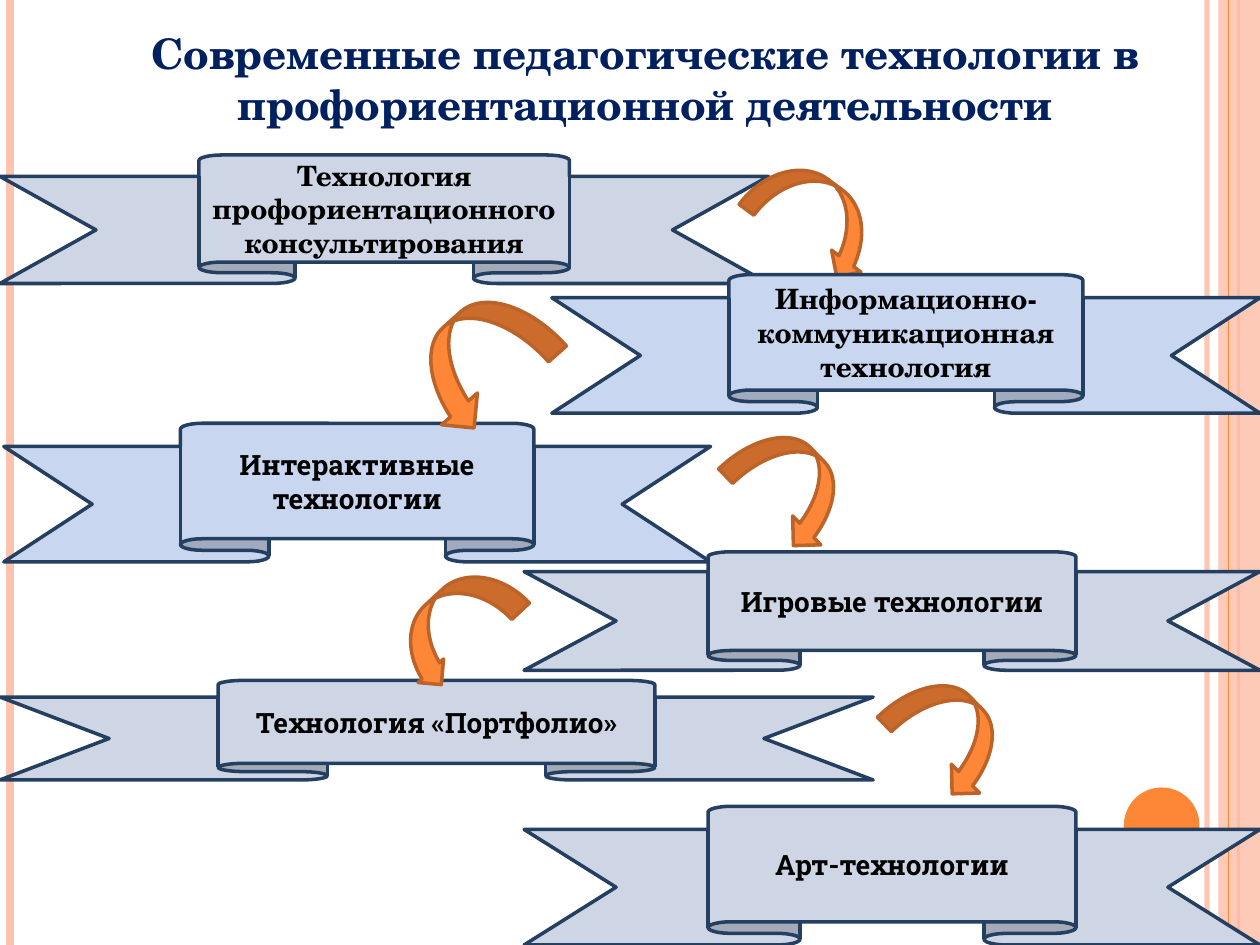
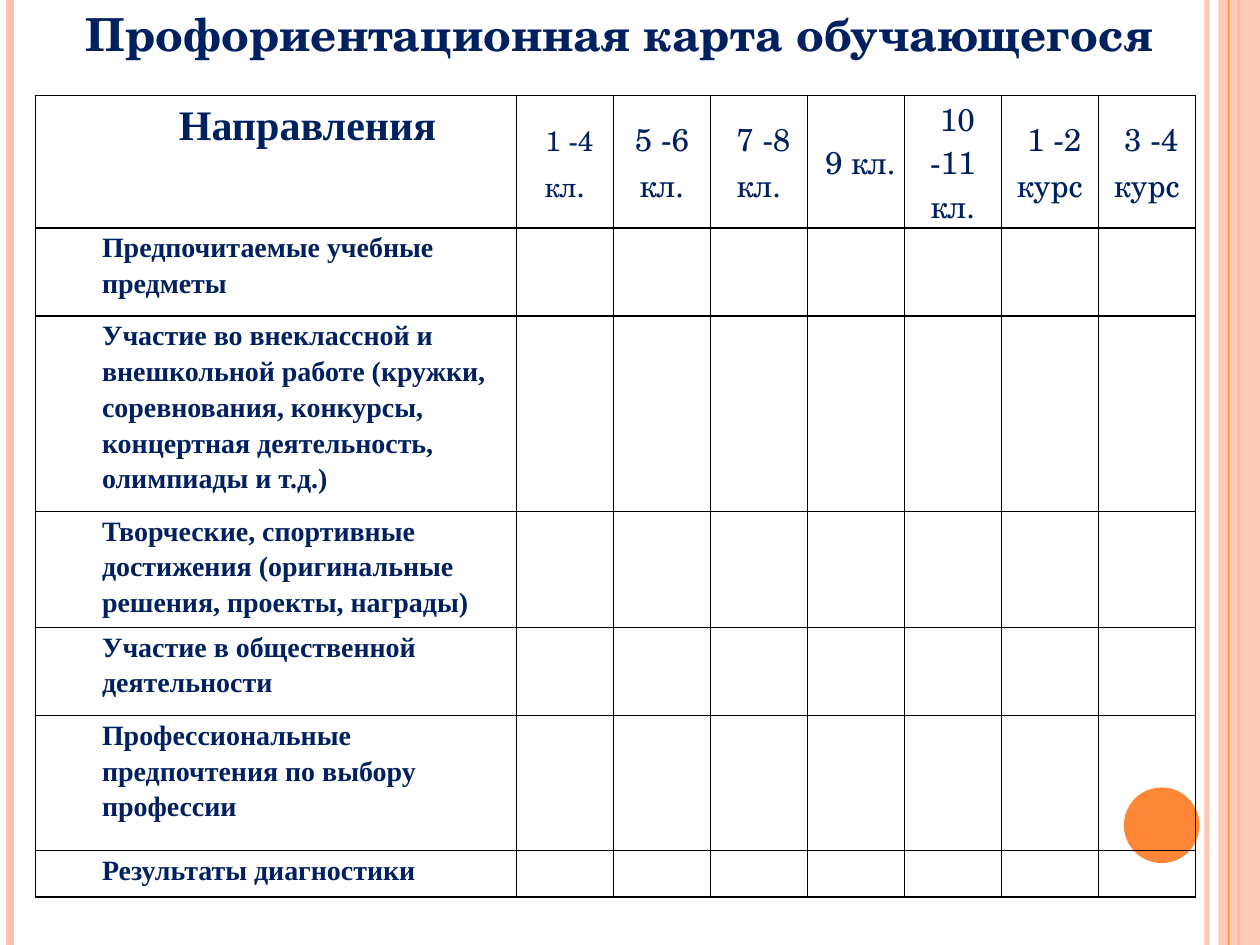
"""Build two slides on career guidance: a chain of technologies and a student's map."""
from dataclasses import dataclass
from typing import Any, Optional

import pptx
import pptx.dml.color
import pptx.enum.shapes
import pptx.enum.text
import pptx.oxml
import pptx.oxml.ns
import pptx.util
from pptx.util import Inches

COLORS = {
    "navy": "002060", "black": "000000", "orange": "FE8637", "rust": "BC6329",
    "peach": "FEC3AE", "ribbon_edge": "243F60", "gray_blue": "CED6E6", "light_blue": "C8D6F0",
}
SCHOLA, SLAB, TIMES = "TeX Gyre Schola", "Roboto Slab", "Times New Roman"
SHAPES = pptx.enum.shapes.MSO_SHAPE
ALIGN = pptx.enum.text.PP_ALIGN
ANCHOR = pptx.enum.text.MSO_ANCHOR
DOWN, UP = SHAPES.CURVED_DOWN_ARROW, SHAPES.CURVED_UP_ARROW
TITLE_ONLY_LAYOUT = 5
SLIDE_HEIGHT = 7.5


@dataclass
class Stripe:
    x: float
    color: str
    width: float
    opacity: int = 100


@dataclass
class Ribbon:
    text: str
    box: tuple[float, float, float, float]
    font: str = SLAB
    fill: str = "gray_blue"
    fold: float = 0.5


@dataclass
class CurvedArrow:
    box: tuple[float, float, float, float]
    rotation: float
    kind: Any = DOWN
    thickness: float = 0.25


@dataclass
class Grade:
    text: Any
    spacing: Optional[float] = None


BACK_STRIPES = [Stripe(9.58, "peach", 3, 93), Stripe(0.08, "peach", 4.5), Stripe(9.83, "orange", 1.5)]
FRONT_STRIPE = Stripe(9.75, "orange", 0.75)

TECHNOLOGY_CHAIN = [
    Ribbon("Технология профориентационного консультирования", (0, 1.23, 6.1, 1.02), SCHOLA, fold=0.482),
    CurvedArrow((5.93, 1.43, 1.11, 0.58), 36.6),
    Ribbon("Информационно-коммуникационная технология", (4.38, 2.18, 5.62, 1.1), SCHOLA, "light_blue"),
    Ribbon("Интерактивные технологии", (0.03, 3.36, 5.61, 1.1), fill="light_blue"),
    CurvedArrow((5.78, 3.54, 1.01, 0.64), 45.7),
    Ribbon("Игровые технологии", (4.16, 4.38, 5.84, 0.94)),
    Ribbon("Технология «Портфолио»", (0, 5.4, 6.93, 0.79)),
    CurvedArrow((3.22, 2.47, 1.17, 0.76), 138.4, UP),
    CurvedArrow((3.07, 4.68, 1.09, 0.55), 137.2, UP, 0.347),
    CurvedArrow((7.04, 5.51, 1.01, 0.64), 45.7),
    Ribbon("Арт-технологии", (4.16, 6.4, 5.84, 1.1)),
]

GRADES = [
    Grade([(" ", 18), ("1 -4 кл", 16), (".", 18)]), Grade("5 -6 кл."), Grade(" 7 -8 кл."), Grade(" 9 кл."),
    Grade(" 10 -11 кл.", 0.94), Grade(" 1 -2 курс"), Grade(" 3 -4 курс"),
]
DIRECTIONS = [
    ("Предпочитаемые учебные предметы", 0.7),
    ("Участие во внеклассной и внешкольной работе (кружки, соревнования, конкурсы, "
     "концертная деятельность, олимпиады и т.д.)", 1.55),
    ("Творческие, спортивные достижения (оригинальные решения, проекты, награды)", 0.92),
    ("Участие в общественной деятельности", 0.7),
    ("Профессиональные предпочтения по выбору профессии", 1.07),
    ("Результаты диагностики", 0.37),
]
HEADER_HEIGHT, DIRECTION_WIDTH, GRADE_WIDTH = 1.05, 3.82, 0.77


def rgb(name: str) -> pptx.dml.color.RGBColor:
    return pptx.dml.color.RGBColor.from_string(COLORS[name])


def inches(box: tuple[float, ...]) -> list[int]:
    return [Inches(length) for length in box]


def write(frame: Any, text: Any, *, font: str, size: float = 18, color: str = "navy", bold: bool = False,
          align: Any = ALIGN.CENTER, spacing: Optional[float] = None, indent: float = 0) -> None:
    paragraph = frame.paragraphs[0]
    paragraph.alignment = align
    if spacing:
        paragraph.line_spacing = spacing
    if indent:
        properties = paragraph._p.get_or_add_pPr()
        properties.set("marL", str(Inches(indent)))
        properties.set("indent", "0")
    for piece, piece_size in [(text, size)] if isinstance(text, str) else text:
        run = paragraph.add_run()
        run.text = piece
        run.font.name = font
        run.font.size = pptx.util.Pt(piece_size)
        run.font.bold = bold
        run.font.color.rgb = rgb(color)


def set_opacity(element: Any, percent: int) -> None:
    if percent < 100:
        color = next(element.iter(pptx.oxml.ns.qn("a:srgbClr")))
        color.append(color.makeelement(pptx.oxml.ns.qn("a:alpha"), {"val": str(percent * 1000)}))


def add_filled_shape(slide: Any, kind: Any, box: tuple[float, ...], fill: str,
                     edge: Optional[str] = None) -> Any:
    shape = slide.shapes.add_shape(kind, *inches(box))
    shape.shadow.inherit = False
    shape.fill.solid()
    shape.fill.fore_color.rgb = rgb(fill)
    if edge:
        shape.line.color.rgb = rgb(edge)
        shape.line.width = pptx.util.Pt(2)
    else:
        shape.line.fill.background()
    return shape


def add_stripe(slide: Any, stripe: Stripe) -> None:
    x = Inches(stripe.x)
    connector = slide.shapes.add_connector(
        pptx.enum.shapes.MSO_CONNECTOR.STRAIGHT, x, 0, x, Inches(SLIDE_HEIGHT))
    connector.line.color.rgb = rgb(stripe.color)
    connector.line.width = pptx.util.Pt(stripe.width)
    properties = connector._element.spPr
    set_opacity(properties, stripe.opacity)
    properties.append(properties.makeelement(pptx.oxml.ns.qn("a:effectLst"), {}))


def add_base_slide(presentation: Any, title: str, box: tuple[float, ...], size: float, anchor: Any) -> Any:
    slide = presentation.slides.add_slide(presentation.slide_layouts[TITLE_ONLY_LAYOUT])
    for stripe in BACK_STRIPES:
        add_stripe(slide, stripe)
    band = add_filled_shape(slide, SHAPES.RECTANGLE, (9.67, 0, 0.33, SLIDE_HEIGHT), "peach")
    set_opacity(band._element.spPr, 87)
    add_stripe(slide, FRONT_STRIPE)
    add_filled_shape(slide, SHAPES.OVAL, (8.92, 6.25, 0.6, 0.6), "orange")

    heading = slide.shapes.title
    heading.left, heading.top, heading.width, heading.height = inches(box)
    frame = heading.text_frame
    frame.word_wrap = True
    frame.auto_size = pptx.enum.text.MSO_AUTO_SIZE.NONE
    frame.vertical_anchor = anchor
    write(frame, title, font=SCHOLA, size=size, bold=True)
    return slide


def add_ribbon(slide: Any, ribbon: Ribbon) -> None:
    shape = add_filled_shape(slide, SHAPES.UP_RIBBON, ribbon.box, ribbon.fill, "ribbon_edge")
    shape.adjustments[0] = 0.167
    shape.adjustments[1] = ribbon.fold
    shape.text_frame.word_wrap = True
    shape.text_frame.vertical_anchor = ANCHOR.MIDDLE
    write(shape.text_frame, ribbon.text, font=ribbon.font, size=16, color="black", bold=True)


def add_curved_arrow(slide: Any, arrow: CurvedArrow) -> None:
    shape = add_filled_shape(slide, arrow.kind, arrow.box, "orange", "rust")
    shape.adjustments[0] = arrow.thickness
    shape.rotation = arrow.rotation


def format_cell(cell: Any) -> None:
    cell.margin_left = cell.margin_right = Inches(0.03)
    cell.margin_top = cell.margin_bottom = 0
    properties = cell._tc.get_or_add_tcPr()
    for side in ("lnL", "lnR", "lnT", "lnB"):
        properties.append(pptx.oxml.parse_xml(
            f'<a:{side} {pptx.oxml.ns.nsdecls("a")} w="{pptx.util.Pt(1)}"><a:solidFill>'
            f'<a:srgbClr val="{COLORS["black"]}"/></a:solidFill></a:{side}>'))
    cell.fill.background()


def add_guidance_table(slide: Any) -> None:
    heights = [HEADER_HEIGHT] + [height for _, height in DIRECTIONS]
    widths = [DIRECTION_WIDTH] + [GRADE_WIDTH] * len(GRADES)
    table = slide.shapes.add_table(
        len(heights), len(widths), *inches((0.28, 0.76, sum(widths), sum(heights)))).table
    table.first_row = table.horz_banding = False
    for column, width in zip(table.columns, widths):
        column.width = Inches(width)
    for row, height in zip(table.rows, heights):
        row.height = Inches(height)
    for cell in table.iter_cells():
        format_cell(cell)

    write(table.cell(0, 0).text_frame, "Направления", font=TIMES, size=24, bold=True, spacing=1.15, indent=0.5)
    for column, grade in enumerate(GRADES, start=1):
        cell = table.cell(0, column)
        cell.vertical_anchor = ANCHOR.MIDDLE
        write(cell.text_frame, grade.text, font=SCHOLA, spacing=grade.spacing)
    for row, (direction, _) in enumerate(DIRECTIONS, start=1):
        write(table.cell(row, 0).text_frame, direction, font=TIMES, size=16, bold=True,
              align=ALIGN.LEFT, spacing=1.15, indent=0.5)


def main() -> None:
    presentation = pptx.Presentation()
    presentation.slide_width, presentation.slide_height = Inches(10), Inches(SLIDE_HEIGHT)

    technologies = add_base_slide(
        presentation, "Современные педагогические технологии в профориентационной деятельности",
        (0.59, -0.24, 9.06, 1.31), 24, ANCHOR.BOTTOM)
    for item in TECHNOLOGY_CHAIN:
        if isinstance(item, Ribbon):
            add_ribbon(technologies, item)
        else:
            add_curved_arrow(technologies, item)

    guidance_map = add_base_slide(
        presentation, "Профориентационная карта обучающегося", (0.43, 0, 8.98, 0.54), 26, ANCHOR.TOP)
    add_guidance_table(guidance_map)

    presentation.save("out.pptx")


if __name__ == "__main__":
    main()
